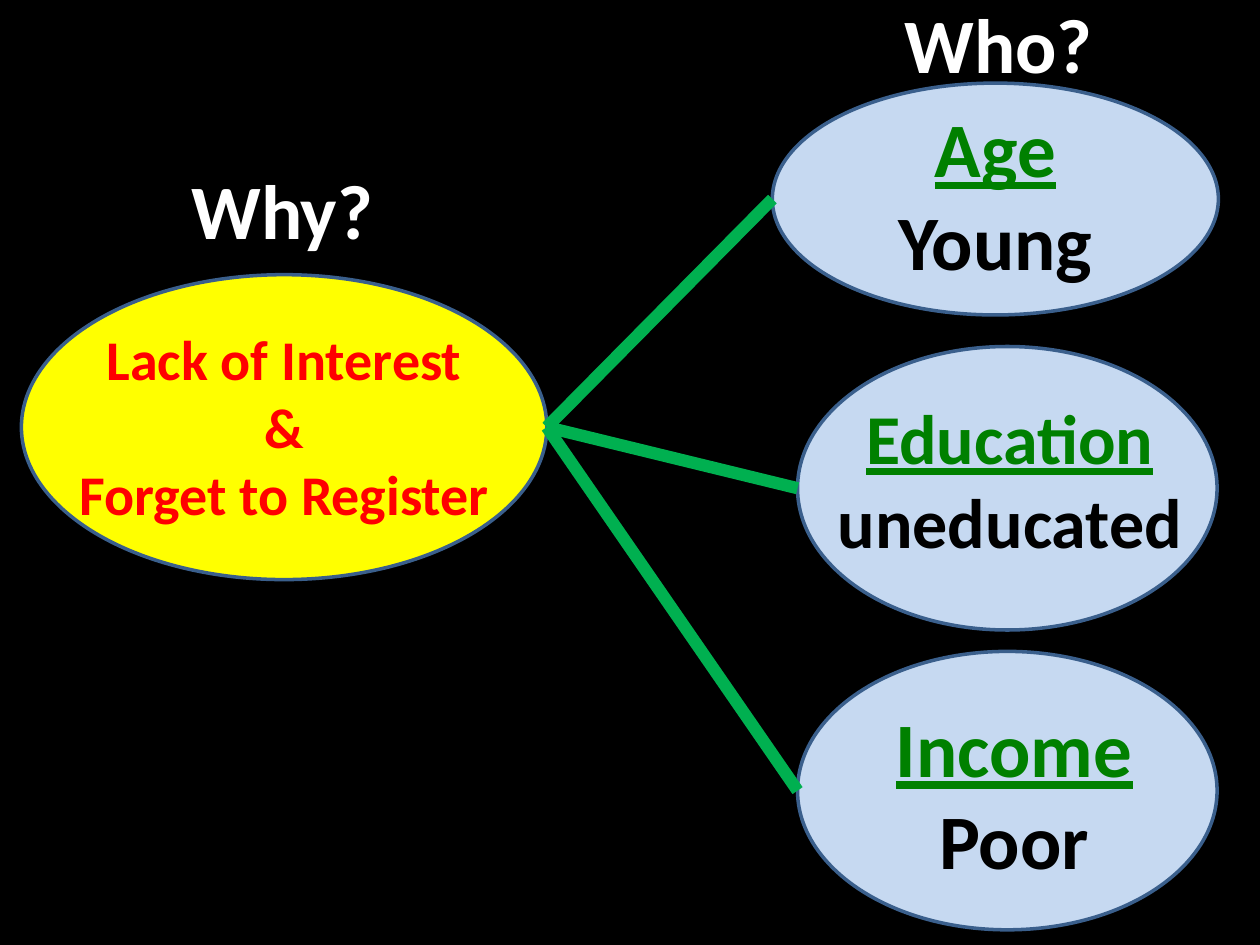
from lxml import etree
from pptx import Presentation
from pptx.dml.color import RGBColor
from pptx.enum.shapes import MSO_CONNECTOR, MSO_SHAPE
from pptx.enum.text import MSO_AUTO_SIZE, PP_ALIGN
from pptx.oxml.ns import qn
from pptx.util import Inches, Pt

ELLIPSE = MSO_SHAPE.OVAL
STRAIGHT = MSO_CONNECTOR.STRAIGHT
CENTER, LEFT = PP_ALIGN.CENTER, PP_ALIGN.LEFT

COLORS = {
    "background": "000000", "heading": "FFFFFF", "outline": "3A5F8C",
    "reason": "FFFF00", "reason text": "FF0000",
    "group": "C6D9F1", "group title": "008000", "group text": "000000",
    "link": "00B050",
}

# Boxes are left, top, width, height in inches.
REASON = {
    "ellipse": (0.17, 2.18, 4.17, 2.42),
    "text": (0.51, 2.53, 3.49, 1.72),
    "lines": ["Lack of Interest", "&", "Forget to Register"],
}
GROUPS = [
    {"ellipse": (6.13, 0.66, 3.54, 1.84), "text": (7.02, 0.75, 1.76, 1.58),
     "lines": ["Age", "Young"], "size": 44},
    {"ellipse": (6.33, 2.75, 3.33, 2.25), "text": (6.53, 3.08, 2.97, 1.45),
     "lines": ["Education", "uneducated"], "size": 40},
    {"ellipse": (6.33, 5.17, 3.33, 2.21), "text": (7, 5.51, 2.1, 1.58),
     "lines": ["Income", "Poor"], "size": 44},
]
HEADINGS = [("Why?", (1.42, 1.24, 1.66, 0.84)), ("Who?", (7.08, -0.08, 1.71, 0.84))]


def color(name):
    return RGBColor.from_string(COLORS[name])


def add_ellipse(slide, box, fill):
    shape = slide.shapes.add_shape(ELLIPSE, *map(Inches, box))
    shape.shadow.inherit = False
    shape.fill.solid()
    shape.fill.fore_color.rgb = color(fill)
    shape.line.color.rgb = color("outline")
    shape.line.width = Pt(2)
    return shape


def add_text(slide, box, lines, size, alignment=CENTER):
    """Add a bold text box; each line is (text, color name, underlined)."""
    frame = slide.shapes.add_textbox(*map(Inches, box)).text_frame
    frame.word_wrap = False
    frame.auto_size = MSO_AUTO_SIZE.SHAPE_TO_FIT_TEXT
    frame.text = "\n".join(text for text, _, _ in lines)
    for paragraph, (_, color_name, underlined) in zip(frame.paragraphs, lines):
        paragraph.alignment = alignment
        font = paragraph.font
        font.name, font.size, font.bold = "Calibri", Pt(size), True
        font.underline = underlined
        font.color.rgb = color(color_name)


def add_link(slide, group, reason):
    """Join the left end of a group ellipse to the right end of the reason."""
    connector = slide.shapes.add_connector(
        STRAIGHT,
        group.left, group.top + group.height // 2,
        reason.left + reason.width, reason.top + reason.height // 2)
    connector.line.color.rgb = color("link")
    connector.line.width = Pt(7)
    etree.SubElement(connector._element.spPr, qn("a:effectLst"))


def main():
    presentation = Presentation()
    presentation.slide_width, presentation.slide_height = Inches(10), Inches(7.5)
    slide = presentation.slides.add_slide(presentation.slide_layouts[6])
    slide.background.fill.solid()
    slide.background.fill.fore_color.rgb = color("background")

    reason = add_ellipse(slide, REASON["ellipse"], "reason")
    add_text(slide, REASON["text"],
             [(line, "reason text", False) for line in REASON["lines"]], 32)

    group_ellipses = []
    for group in GROUPS:
        group_ellipses.append(add_ellipse(slide, group["ellipse"], "group"))
        title, detail = group["lines"]
        add_text(slide, group["text"],
                 [(title, "group title", True), (detail, "group text", False)],
                 group["size"])
    for ellipse in group_ellipses:
        add_link(slide, ellipse, reason)

    for heading, box in HEADINGS:
        add_text(slide, box, [(heading, "heading", False)], 44, LEFT)

    presentation.save("out.pptx")


if __name__ == "__main__":
    main()
